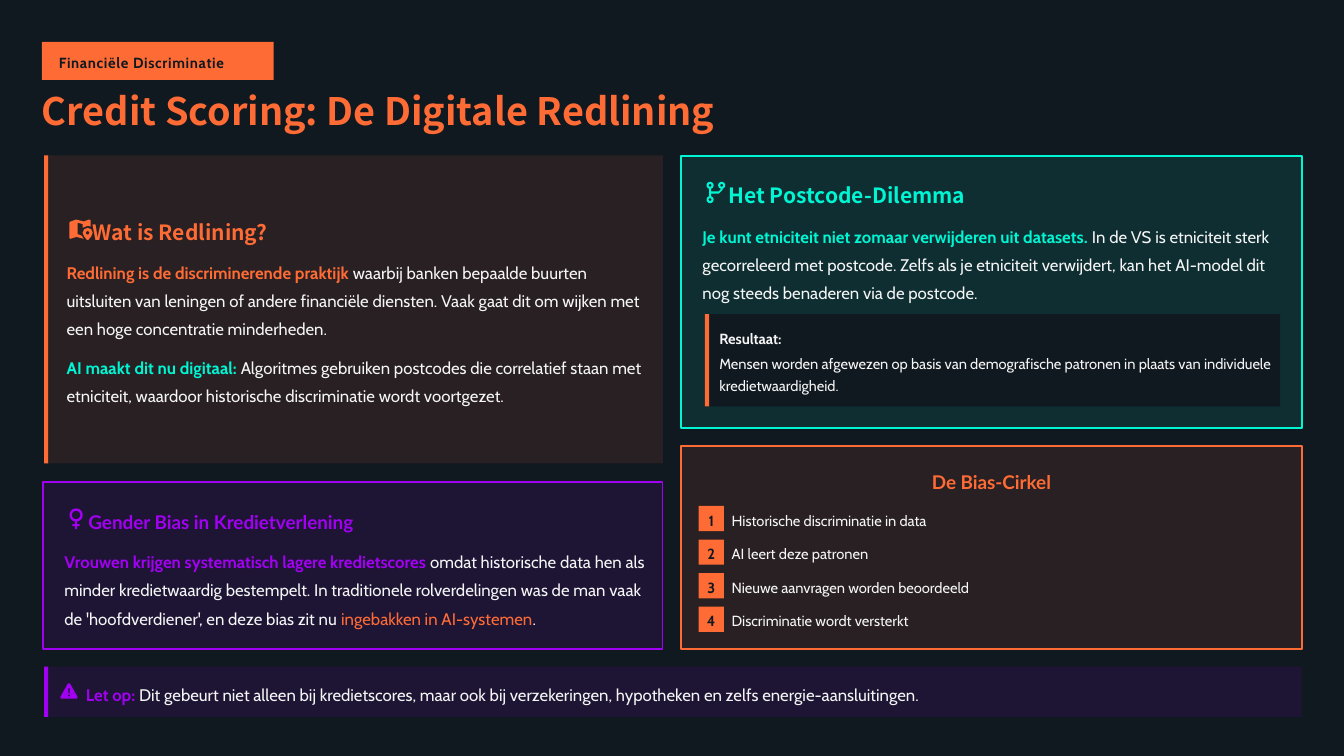
from dataclasses import dataclass
from math import cos, pi, sin

from lxml.etree import SubElement
from pptx import Presentation
from pptx.dml.color import RGBColor
from pptx.enum.shapes import MSO_SHAPE
from pptx.enum.text import MSO_ANCHOR, PP_ALIGN
from pptx.oxml.ns import qn
from pptx.shapes.autoshape import Shape
from pptx.slide import Slide
from pptx.text.text import TextFrame
from pptx.util import Pt

COLORS = {
    "night": "101820",
    "orange": "FF6B35",
    "mint": "00F5D3",
    "purple": "A100F2",
    "light": "F5F5F5",
}
BODY, DISPLAY, HEADING = "Cabin", "Noto Sans CJK SC", "Lato"

Point = tuple[float, float]


@dataclass
class Panel:
    x: float
    y: float
    width: float
    height: float
    color: str
    opacity: int = 100
    outlined: bool = False
    accent: str = ""


@dataclass
class Span:
    text: str
    color: str = "light"
    bold: bool = False


@dataclass
class Passage:
    x: float
    y: float
    width: float
    height: float
    spans: list[Span]
    size: float = 12
    font: str = BODY
    leading: float = 1.4
    align: PP_ALIGN = PP_ALIGN.LEFT
    tracking: int = 0


@dataclass
class Icon:
    color: str
    outlines: list[list[Point]]


def rgb(color: str) -> RGBColor:
    return RGBColor.from_string(COLORS[color])


def circle(x: float, y: float, radius: float) -> list[Point]:
    angles = [2 * pi * step / 32 for step in range(32)]
    return [(x + radius * cos(a), y + radius * sin(a)) for a in angles]


def paint(shape: Shape, color: str, opacity: int = 100) -> None:
    shape.shadow.inherit = False
    shape.line.fill.background()
    shape.fill.solid()
    shape.fill.fore_color.rgb = rgb(color)
    if opacity < 100:
        tint = shape.element.spPr.find(qn("a:solidFill"))[0]
        SubElement(tint, qn("a:alpha")).set("val", str(opacity * 1000))


def draw_panel(slide: Slide, panel: Panel) -> Shape:
    area = slide.shapes.add_shape(
        MSO_SHAPE.RECTANGLE, Pt(panel.x), Pt(panel.y), Pt(panel.width), Pt(panel.height))
    paint(area, panel.color, panel.opacity)
    if panel.outlined:
        area.line.color.rgb = rgb(panel.color)
        area.line.width = Pt(1.25)
    if panel.accent:
        draw_panel(slide, Panel(panel.x, panel.y, 3, panel.height, panel.accent))
    return area


def write(frame: TextFrame, passage: Passage) -> None:
    frame.word_wrap = True
    frame.vertical_anchor = MSO_ANCHOR.MIDDLE
    frame.margin_left = frame.margin_right = frame.margin_top = frame.margin_bottom = 0
    paragraph = frame.paragraphs[0]
    paragraph.text = passage.spans[0].text
    for span in passage.spans[1:]:
        paragraph.add_run().text = span.text
    paragraph.line_spacing = passage.leading
    paragraph.alignment = passage.align
    for run, span in zip(paragraph.runs, passage.spans):
        run.font.name = passage.font
        run.font.size = Pt(passage.size)
        run.font.bold = span.bold
        run.font.color.rgb = rgb(span.color)
        if passage.tracking:
            run.font._element.set("spc", str(passage.tracking))


def draw_passage(slide: Slide, passage: Passage) -> None:
    box = slide.shapes.add_textbox(
        Pt(passage.x), Pt(passage.y), Pt(passage.width), Pt(passage.height))
    write(box.text_frame, passage)


def draw_icon(slide: Slide, icon: Icon) -> None:
    first, *others = [[(Pt(x), Pt(y)) for x, y in outline] for outline in icon.outlines]
    builder = slide.shapes.build_freeform(*first[0])
    builder.add_line_segments(first[1:], close=True)
    for outline in others:
        builder.move_to(*outline[0])
        builder.add_line_segments(outline[1:], close=True)
    paint(builder.convert_to_shape(), icon.color)


def draw_step(slide: Slide, index: int, label: str) -> None:
    top = 361.4 + 24 * index
    badge = draw_panel(slide, Panel(499, top, 18, 18, "orange"))
    write(badge.text_frame, Passage(
        499, top, 18, 18, [Span(str(index + 1), "night", True)], 10.5,
        leading=1.2, align=PP_ALIGN.CENTER))
    draw_passage(slide, Passage(522.7, top + 1.5, 390, 15, [Span(label)], 10.5, leading=1.2))


PANELS = [
    Panel(30, 30, 165.6, 27, "orange"),
    Panel(31.5, 111, 442, 220, "orange", 10, accent="orange"),
    Panel(30.5, 344.4, 442.8, 119.4, "purple", 10, outlined=True),
    Panel(486.7, 111.5, 443.5, 194.4, "mint", 10, outlined=True),
    Panel(503.5, 224.4, 411, 66, "night", accent="orange"),
    Panel(486.7, 318.8, 443.5, 145, "orange", 10, outlined=True),
    Panel(31.5, 476.2, 898.3, 36, "purple", 10, accent="purple"),
]

PASSAGES = [
    Passage(42, 30, 147, 27, [Span("Financiële Discriminatie", "night", True)], 10.5,
            leading=1.2, tracking=50),
    Passage(30, 66, 914, 30, [Span("Credit Scoring: De Digitale Redlining", "orange", True)],
            27, DISPLAY, 0.9),
    Passage(66.3, 153.4, 400, 21, [Span("Wat is Redlining?", "orange", True)],
            15, DISPLAY, 1.2),
    Passage(47.6, 182.8, 417, 58.5, [
        Span("Redlining is de discriminerende praktijk", "orange", True),
        Span(" waarbij banken bepaalde buurten uitsluiten van leningen of andere financiële "
             "diensten. Vaak gaat dit om wijken met een hoge concentratie minderheden.")]),
    Passage(47.6, 250.6, 417, 39, [
        Span("AI maakt dit nu digitaal:", "mint", True),
        Span(" Algoritmes gebruiken postcodes die correlatief staan met etniciteit, "
             "waardoor historische discriminatie wordt voortgezet.")]),
    Passage(63.2, 360, 401, 21, [Span("Gender Bias in Kredietverlening", "purple", True)],
            13.5, HEADING, 1.3),
    Passage(46, 389.4, 417.6, 58.5, [
        Span("Vrouwen krijgen systematisch lagere kredietscores", "purple", True),
        Span(" omdat historische data hen als minder kredietwaardig bestempelt. In traditionele "
             "rolverdelingen was de man vaak de 'hoofdverdiener', en deze bias zit nu "),
        Span("ingebakken in AI-systemen", "orange"),
        Span(".")]),
    Passage(520.4, 126.8, 401, 21, [Span("Het Postcode-Dilemma", "mint", True)],
            15, DISPLAY, 1.2),
    Passage(501.8, 157, 418.3, 58.5, [
        Span("Je kunt etniciteit niet zomaar verwijderen uit datasets.", "mint", True),
        Span(" In de VS is etniciteit sterk gecorreleerd met postcode. Zelfs als je etniciteit "
             "verwijdert, kan het AI-model dit nog steeds benaderen via de postcode.")]),
    Passage(513.8, 233.4, 397, 15, [Span("Resultaat:", bold=True)], 10.5, leading=1.2),
    Passage(513.8, 251.4, 397, 30, [
        Span("Mensen worden afgewezen op basis van demografische patronen in plaats van "
             "individuele kredietwaardigheid.")], 10.5, leading=1.2),
    Passage(495.4, 331.2, 425.5, 21, [Span("De Bias-Cirkel", "orange", True)],
            13.5, HEADING, 1.3, PP_ALIGN.CENTER),
    Passage(61.3, 485.3, 865, 18, [
        Span("Let op:", "purple", True),
        Span(" Dit gebeurt niet alleen bij kredietscores, maar ook bij verzekeringen, "
             "hypotheken en zelfs energie-aansluitingen.")], leading=1.3),
]

STEPS = [
    "Historische discriminatie in data",
    "AI leert deze patronen",
    "Nieuwe aanvragen worden beoordeeld",
    "Discriminatie wordt versterkt",
]

MAP = Icon("orange", [
    [(64.8, 157.2), (63.6, 156.8), (59.8, 158.2), (54.4, 156.8), (50, 158.4), (49.5, 159.2),
     (49.5, 170), (50.2, 170.6), (54.7, 169.2), (59.8, 170.6), (58.3, 168.3), (55.4, 167.2),
     (55.4, 159.1), (59, 160), (59, 162.7), (62.6, 161.3), (64.8, 161.8)],
    [(59, 166.3), (60.1, 163.8), (62.6, 162.7), (65.2, 163.8), (66.2, 166.3), (65.2, 168.8),
     (63.1, 171.4), (62.2, 171.4), (60.1, 168.8)],
    circle(62.6, 166.3, 1.2),
])
VENUS = Icon("purple", [
    circle(54.4, 367.9, 4.7),
    circle(54.4, 367.9, 3),
    [(53.7, 372.6), (55.1, 372.6), (55.1, 374.4), (57, 374.4), (57, 375.8), (55.1, 375.8),
     (55.1, 378), (53.7, 378), (53.7, 375.8), (51.8, 375.8), (51.8, 374.4), (53.7, 374.4)],
])
BRANCH_NODES = [(507.2, 132.4), (515.5, 132.4), (507.2, 142.6)]
BRANCH = Icon("mint", [
    *[circle(x, y, radius) for x, y in BRANCH_NODES for radius in (2.5, 1)],
    [(506.5, 134.8), (508, 134.8), (508, 136.8), (513.4, 136.8), (514.8, 135.4),
     (514.8, 134.8), (516.2, 134.8), (516.2, 135.6), (513.4, 138.3), (508, 138.3),
     (508, 140.2), (506.5, 140.2)],
])
WARNING = Icon("purple", [
    [(48.4, 488.5), (49.3, 488), (50.2, 488.5), (55.4, 497.7), (55.3, 498.7), (54.6, 499.1),
     (44, 499.1), (43.3, 498.7), (43.2, 497.7)],
    [(48.8, 491.5), (49.8, 491.5), (49.8, 495.2), (48.8, 495.2)],
    circle(49.3, 496.8, 0.7),
])


def main() -> None:
    presentation = Presentation()
    presentation.slide_width, presentation.slide_height = Pt(960), Pt(540)
    slide = presentation.slides.add_slide(presentation.slide_layouts[6])
    slide.background.fill.solid()
    slide.background.fill.fore_color.rgb = rgb("night")
    for panel in PANELS:
        draw_panel(slide, panel)
    for icon in (MAP, VENUS, BRANCH, WARNING):
        draw_icon(slide, icon)
    for passage in PASSAGES:
        draw_passage(slide, passage)
    for index, label in enumerate(STEPS):
        draw_step(slide, index, label)
    presentation.save("out.pptx")


if __name__ == "__main__":
    main()
